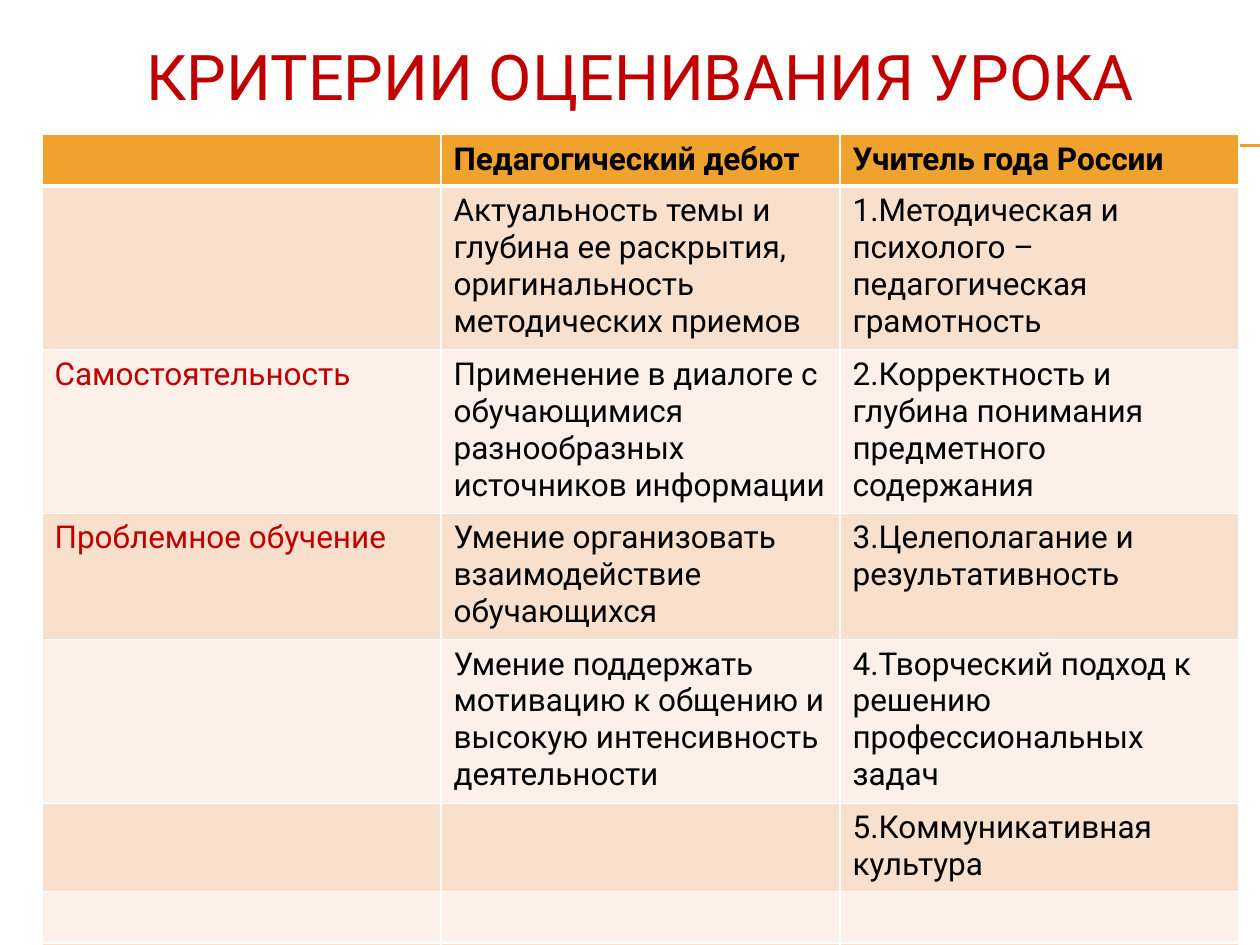
from dataclasses import dataclass

from lxml import etree
from pptx import Presentation
from pptx import util as u
from pptx.dml.color import RGBColor
from pptx.enum import shapes, text
from pptx.oxml import ns


@dataclass(frozen=True)
class Theme:
    font: str = "Roboto"
    red: str = "C00000"
    black: str = "000000"
    white: str = "FFFFFF"
    orange: str = "F0A22E"
    bands: tuple = ("F9E0CD", "FCF0E8")
    title_size: int = 36
    body_size: int = 18


THEME = Theme()
LEFT, WIDTH = 24, 684
ROW_HEIGHT = 29.2

# Columns: own emphasis, "debut" criteria, "teacher of the year" criteria
CRITERIA = [
    ("", "Педагогический дебют", "Учитель года России"),
    ("", "Актуальность темы и глубина ее раскрытия, оригинальность методических приемов",
     "1.Методическая и психолого – педагогическая грамотность"),
    ("Самостоятельность",
     "Применение в диалоге с обучающимися разнообразных источников информации",
     "2.Корректность и глубина понимания предметного содержания"),
    ("Проблемное обучение", "Умение организовать взаимодействие обучающихся",
     "3.Целеполагание и результативность"),
    ("", "Умение поддержать мотивацию к общению и высокую интенсивность деятельности",
     "4.Творческий подход к решению профессиональных задач"),
    ("", "", "5.Коммуникативная культура"),
    ("", "", ""),
    ("", "", ""),
]


def add_run(para, words, size, color, bold=False):
    span = para.add_run()
    span.text = words
    span.font.name = THEME.font
    span.font.size = u.Pt(size)
    span.font.bold = bold
    span.font.color.rgb = RGBColor.from_string(color)


def add_title(page, words):
    box = page.shapes.add_textbox(u.Pt(LEFT), u.Pt(9.4), u.Pt(WIDTH), u.Pt(67.6))
    frame = box.text_frame
    frame.word_wrap = True
    frame.vertical_anchor = text.MSO_ANCHOR.MIDDLE
    para = frame.paragraphs[0]
    para.alignment = text.PP_ALIGN.CENTER
    add_run(para, words, THEME.title_size, THEME.red)


def add_rule(page, top):
    rule = page.shapes.add_connector(
        shapes.MSO_CONNECTOR.STRAIGHT, u.Pt(40.3), u.Pt(top), u.Pt(720), u.Pt(top))
    rule.line.color.rgb = RGBColor.from_string(THEME.orange)
    rule.line.width = u.Pt(0.75)
    etree.SubElement(rule.element.spPr, ns.qn("a:effectLst"))


def add_border(cell, side, width):
    properties = cell._tc.get_or_add_tcPr()
    line = etree.SubElement(properties, ns.qn(f"a:ln{side}"), w=str(u.Pt(width)))
    fill = etree.SubElement(line, ns.qn("a:solidFill"))
    etree.SubElement(fill, ns.qn("a:srgbClr"), val=THEME.white)


def fill_cell(cell, words, row, column):
    header = row == 0
    # A thicker line separates the header from the first row
    widths = {"L": 1, "R": 1, "T": 3 if row == 1 else 1, "B": 3 if header else 1}
    for side, width in widths.items():
        add_border(cell, side, width)
    color = THEME.orange if header else THEME.bands[(row - 1) % 2]
    cell.fill.solid()
    cell.fill.fore_color.rgb = RGBColor.from_string(color)
    para = cell.text_frame.paragraphs[0]
    para.font.size = u.Pt(THEME.body_size)
    if words:
        ink = THEME.red if column == 0 else THEME.black
        add_run(para, words, THEME.body_size, ink, header)


def add_criteria_table(page, rows):
    count = len(rows[0])
    table = page.shapes.add_table(
        len(rows), count, u.Pt(LEFT), u.Pt(77),
        u.Pt(WIDTH), u.Pt(ROW_HEIGHT * len(rows))).table
    table.first_row = False
    table.horz_banding = False
    for column in table.columns:
        column.width = u.Pt(WIDTH / count)
    for row, entries in enumerate(rows):
        table.rows[row].height = u.Pt(ROW_HEIGHT)
        for column, words in enumerate(entries):
            fill_cell(table.cell(row, column), words, row, column)


def main():
    deck = Presentation()
    deck.slide_width, deck.slide_height = u.Pt(720), u.Pt(540)
    page = deck.slides.add_slide(deck.slide_layouts[6])

    # Double rule behind the table
    for top in (82.8, 83.5):
        add_rule(page, top)

    # Heading and criteria
    add_title(page, "КРИТЕРИИ ОЦЕНИВАНИЯ УРОКА")
    add_criteria_table(page, CRITERIA)

    deck.save("out.pptx")


if __name__ == "__main__":
    main()
